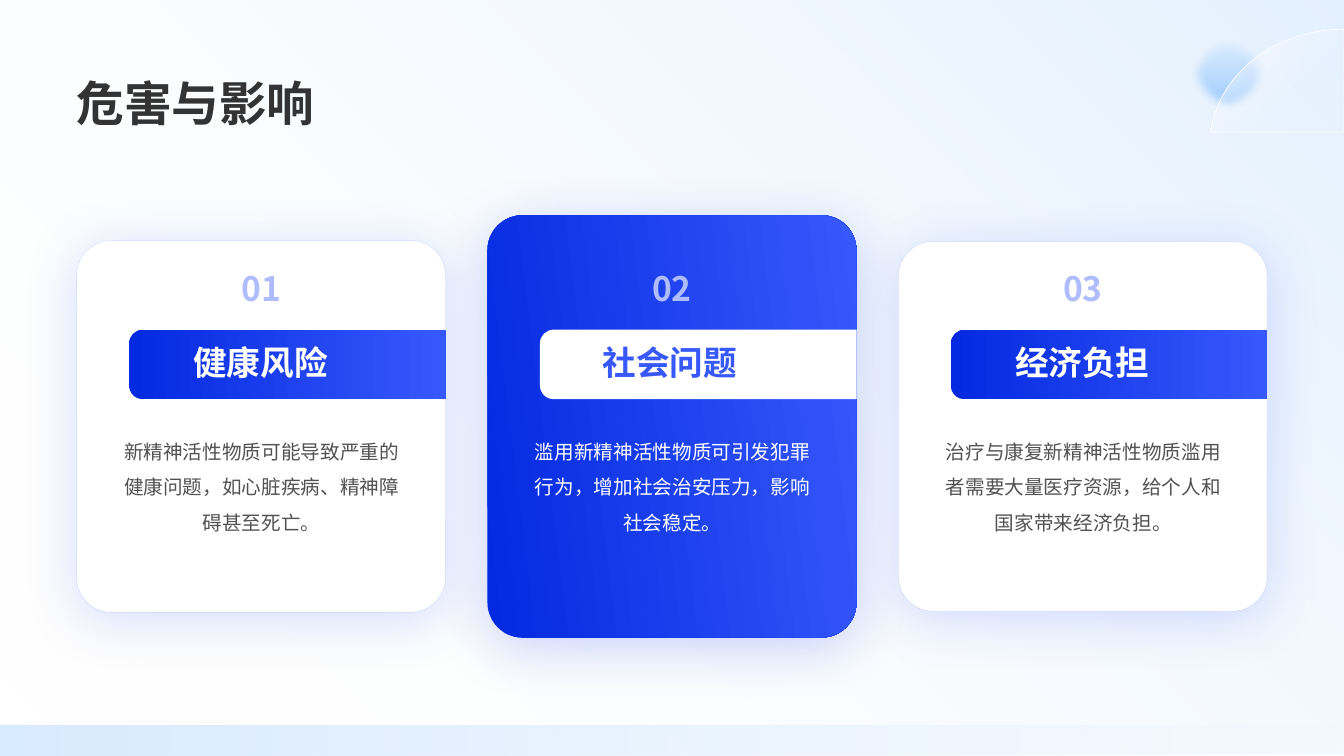
"""Build a slide with three cards on the harms of new psychoactive substances."""
import pptx
import pptx.dml.color
import pptx.enum.shapes
import pptx.enum.text
import pptx.oxml
import pptx.oxml.ns
import pptx.util

TITLE = "危害与影响"
CARDS = [
    {"no": "01", "name": "健康风险", "height": 3.69, "main": False,
     "body": "新精神活性物质可能导致严重的健康问题，如心脏疾病、精神障碍甚至死亡。"},
    {"no": "02", "name": "社会问题", "height": 4.19, "main": True,
     "body": "滥用新精神活性物质可引发犯罪行为，增加社会治安压力，影响社会稳定。"},
    {"no": "03", "name": "经济负担", "height": 3.67, "main": False,
     "body": "治疗与康复新精神活性物质滥用者需要大量医疗资源，给个人和国家带来经济负担。"},
]
COLORS = {"white": "FFFFFF", "sky": "419BFD", "strip": "D9EBFF", "ink": "333333",
          "text": "525252", "deep": "042AE1", "blue": "3758FB", "pale": "AFBCFD"}
FONT = "Noto Sans CJK SC"
W, H = 13.33, 7.5
MARGIN, CARD_W = 0.76, 3.66
PITCH = (W - 2 * MARGIN - CARD_W) / 2
CARD_MID = 4.23
TAB_X, TAB_Y, TAB_H, TAB_R, TAB_C = 0.52, 3.27, 0.69, 0.14, 0.06
BLUES = [(0, "deep", 100), (100, "blue", 100)]

Inches, Pt = pptx.util.Inches, pptx.util.Pt
SHAPE = pptx.enum.shapes.MSO_SHAPE
ANCHOR = pptx.enum.text.MSO_ANCHOR
ALIGN = pptx.enum.text.PP_ALIGN
qn = pptx.oxml.ns.qn

prs = pptx.Presentation()
prs.slide_width, prs.slide_height = Inches(W), Inches(H)
slide = prs.slides.add_slide(prs.slide_layouts[5])
shapes = slide.shapes


def rgb(name):
    return pptx.dml.color.RGBColor.from_string(COLORS[name])


def set_alpha(parent, percent):
    if percent < 100:
        clr = next(parent.iter(qn("a:srgbClr")))
        clr.append(clr.makeelement(qn("a:alpha"), {"val": str(percent * 1000)}))


def paint(sp, fill, angle=0):
    sp.shadow.inherit = False
    sp.line.fill.background()
    if isinstance(fill, str):
        sp.fill.solid()
        sp.fill.fore_color.rgb = rgb(fill)
        return
    sp.fill.gradient()
    sp.fill.gradient_angle = angle
    for stop, (pos, color, alpha) in zip(sp.fill.gradient_stops, fill):
        stop.position = pos / 100
        stop.color.rgb = rgb(color)
        set_alpha(stop._gs, alpha)


def outline(sp, color, width, alpha=100):
    sp.line.color.rgb = rgb(color)
    sp.line.width = Pt(width)
    set_alpha(sp.line._ln, alpha)


def add_effect(sp, xml):
    ns = pptx.oxml.ns.nsdecls("a")
    effects = sp._element.spPr.find(qn("a:effectLst"))
    effects.append(pptx.oxml.parse_xml(xml.replace(" ", f" {ns} ", 1)))


def box(kind, x, y, w, h):
    return shapes.add_shape(kind, Inches(x), Inches(y), Inches(w), Inches(h))


def outline_shape(start, steps):
    """Draw an outline: a step of one point is a line, of three points a curve."""
    fb = shapes.build_freeform(Inches(start[0]), Inches(start[1]))
    fb.add_line_segments([(Inches(x), Inches(y)) for step in steps for x, y in step])
    sp = fb.convert_to_shape()
    lines = iter(list(sp._element.iter(qn("a:lnTo"))))
    for step in steps:
        group = [next(lines) for _ in step]
        if len(group) == 3:
            curve = group[0].makeelement(qn("a:cubicBezTo"), {})
            group[0].addprevious(curve)
            for line in group:
                curve.append(line[0])
                line.getparent().remove(line)
    return sp


def write(sp, text, size, color, bold=False, latin=FONT, align=ALIGN.CENTER,
          anchor=ANCHOR.TOP, insets=(0, 0, 0, 0), wrap=True, spacing=None):
    tf = sp.text_frame
    tf.auto_size = pptx.enum.text.MSO_AUTO_SIZE.NONE
    tf.word_wrap, tf.vertical_anchor = wrap, anchor
    tf.margin_left, tf.margin_top, tf.margin_right, tf.margin_bottom = map(Inches, insets)
    p = tf.paragraphs[0]
    p.alignment, p.line_spacing = align, spacing
    r = p.add_run()
    r.text = text
    r.font.size, r.font.bold, r.font.name = Pt(size), bold, latin
    r.font.color.rgb = rgb(color)
    rPr = r.font._element
    rPr.find(qn("a:latin")).addnext(rPr.makeelement(qn("a:ea"), {"typeface": FONT}))


def text_box(x, y, w, h, *args, **kwargs):
    sp = shapes.add_textbox(Inches(x), Inches(y), Inches(w), Inches(h))
    write(sp, *args, **kwargs)


def add_backdrop():
    paint(box(SHAPE.RECTANGLE, 0, 0, W, 7.48), [(0, "white", 0), (100, "sky", 15)], 45)
    ball = box(SHAPE.OVAL, 11.78, 0.32, 0.81, 0.81)
    paint(ball, [(0, "sky", 0), (100, "sky", 50)], 270)
    add_effect(ball, f'<a:softEdge rad="{Inches(0.09)}"/>')
    dome = outline_shape((W, 0.29), [[(W, 1.31)], [(12, 1.31)], [(12.02, 1.23)],
                                     [(12.14, 0.69), (12.68, 0.29), (W, 0.29)]])
    paint(dome, [(39, "white", 5), (83, "white", 50)], 135)
    outline(dome, "white", 0.5)
    paint(box(SHAPE.RECTANGLE, 0, H - 0.3, W, 0.3), [(0, "strip", 0), (100, "strip", 100)], 180)


def add_title():
    title = shapes.title
    title.left, title.top = Inches(MARGIN), Inches(0.43)
    title.width, title.height = Inches(W - 2 * MARGIN), Inches(0.87)
    write(title, TITLE, 34, "ink", True, "Arial", ALIGN.LEFT, ANCHOR.BOTTOM)
    shapes._spTree.append(title._element)


def add_tab(left, right):
    top, bottom, inner = TAB_Y, TAB_Y + TAB_H, left + TAB_R
    start = (left, top + TAB_R)
    return outline_shape(start, [
        [(left, top + TAB_C), (left + TAB_C, top), (inner, top)],
        [(right, top)], [(right, bottom)], [(inner, bottom)],
        [(left + TAB_C, bottom), (left, bottom - TAB_C), (left, bottom - TAB_R)],
        [start]])


def add_card(x, card):
    main = card["main"]
    tint = "deep" if main else "blue"
    sp = box(SHAPE.ROUNDED_RECTANGLE, x, CARD_MID - card["height"] / 2, CARD_W, card["height"])
    sp.adjustments[0] = 0.095
    paint(sp, BLUES if main else "white", 7)
    outline(sp, tint, 0.25, 20)
    add_effect(sp, f'<a:outerShdw blurRad="{Pt(40)}" dist="{Pt(8 if main else 6)}" '
                   f'dir="5400000" algn="t" rotWithShape="0"><a:srgbClr val="{COLORS[tint]}">'
                   '<a:alpha val="20000"/></a:srgbClr></a:outerShdw>')
    tab = add_tab(x + TAB_X, x + CARD_W)
    paint(tab, "white" if main else BLUES)
    write(tab, card["name"], 24, "blue" if main else "white", True,
          insets=(0.04, 0.12, 0.6 if main else 0.57, 0))
    text_box(x + 1.56, 2.61, 0.54, 0.49, card["no"], 24, "pale", True,
             anchor=ANCHOR.MIDDLE, wrap=False)
    text_box(x + 0.38, 4.25, 2.91, 1.43, card["body"], 14,
             "white" if main else "text", spacing=1.5)


add_backdrop()
add_title()
for col, card in sorted(enumerate(CARDS), key=lambda item: item[1]["main"]):
    add_card(MARGIN + col * PITCH, card)
prs.save("out.pptx")
